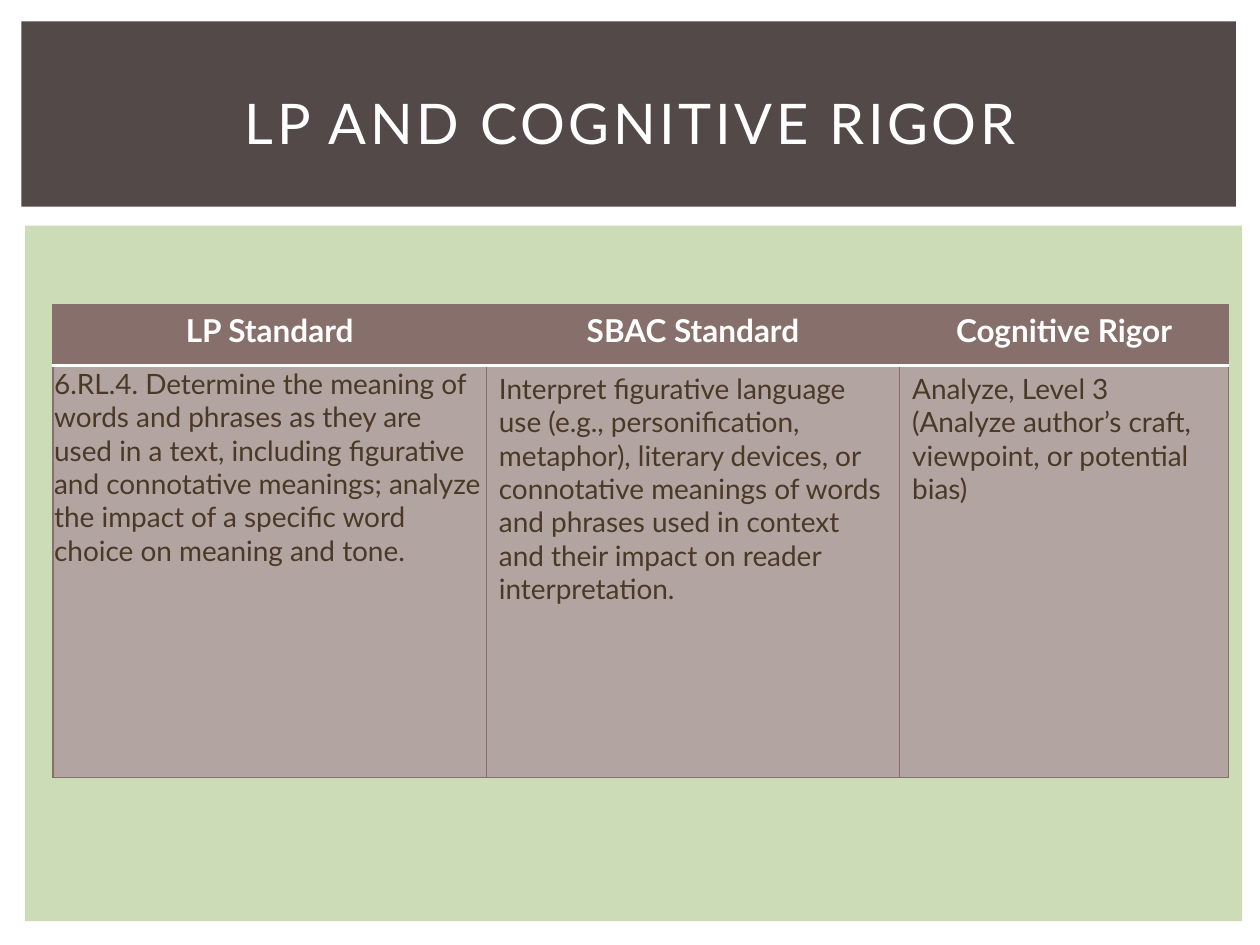
from dataclasses import dataclass

from lxml.etree import SubElement
from pptx import Presentation
from pptx.dml.color import RGBColor
from pptx.enum.shapes import MSO_SHAPE
from pptx.enum.text import MSO_ANCHOR, PP_ALIGN
from pptx.oxml.ns import qn
from pptx.util import Inches, Pt


@dataclass(frozen=True)
class Theme:
    font: str = "Lato"
    white: str = "FFFFFF"
    banner: str = "534949"
    panel: str = "CBDCB6"
    header: str = "87706B"
    body: str = "B2A5A1"
    text: str = "4A3927"
    title_size: int = 32
    header_size: int = 18
    body_size: int = 16


theme = Theme()


def add_span(para, text, size, color, bold=False):
    span = para.add_run()
    span.text = text
    span.font.name = theme.font
    span.font.size = Pt(size)
    span.font.bold = bold
    span.font.color.rgb = RGBColor.from_string(color)
    return span


def set_border(cell, side, color, width):
    """Add one cell border; call in the order L, R, T, B and before the fill."""
    line = SubElement(cell._tc.get_or_add_tcPr(), qn(f"a:ln{side}"), w=str(Pt(width)))
    fill = SubElement(line, qn("a:solidFill"))
    SubElement(fill, qn("a:srgbClr"), val=color)


deck = Presentation()
deck.slide_width, deck.slide_height = Inches(10), Inches(7.5)
page = deck.slides.add_slide(deck.slide_layouts[6])

# Background panel and title banner
for color, *bounds in (
    (theme.panel, 0.2, 1.79, 9.66, 5.52),
    (theme.banner, 0.17, 0.17, 9.64, 1.47),
):
    block = page.shapes.add_shape(MSO_SHAPE.RECTANGLE, *map(Inches, bounds))
    block.shadow.inherit = False
    block.fill.solid()
    block.fill.fore_color.rgb = RGBColor.from_string(color)
    block.line.fill.background()

# Title
box = page.shapes.add_textbox(Inches(0.42), Inches(0.39), Inches(9.17), Inches(1.15))
box.text_frame.word_wrap = True
box.text_frame.vertical_anchor = MSO_ANCHOR.MIDDLE
para = box.text_frame.paragraphs[0]
para.alignment = PP_ALIGN.CENTER
span = add_span(para, "LP AND COGNITIVE RIGOR", theme.title_size, theme.white)
span.font._element.set("spc", "200")

# Standards table: each cell is a list of runs
rows = [
    [["LP Standard"], ["SBAC Standard"], ["Cognitive Rigor"]],
    [
        [
            "6.RL.4. ",
            "Determine the meaning of words and phrases as they are used in a text, "
            "including figurative and connotative meanings; analyze the impact of a "
            "specific word choice on meaning and tone.",
        ],
        [
            "Interpret figurative language use (e.g., personification, metaphor), "
            "literary devices, or connotative meanings of words and phrases used in "
            "context and their impact on reader interpretation."
        ],
        ["Analyze, Level 3 (Analyze author’s craft, viewpoint, or potential bias)"],
    ],
]
table = page.shapes.add_table(
    2, 3, Inches(0.42), Inches(2.42), Inches(9.33), Inches(3.75)
).table
table.horz_banding = False
for column, width in zip(table.columns, (3.44, 3.28, 2.61)):
    column.width = Inches(width)
for row, height in zip(table.rows, (0.48, 3.27)):
    row.height = Inches(height)

for row_index, row in enumerate(rows):
    is_header = row_index == 0
    white_side = "B" if is_header else "T"
    for column_index, texts in enumerate(row):
        cell = table.cell(row_index, column_index)
        for side in "LRTB":
            if side == white_side:
                set_border(cell, side, theme.white, 1.5)
            else:
                set_border(cell, side, theme.header, 0.79)
        cell.fill.solid()
        cell.fill.fore_color.rgb = RGBColor.from_string(
            theme.header if is_header else theme.body
        )
        para = cell.text_frame.paragraphs[0]
        para.alignment = PP_ALIGN.CENTER if is_header else PP_ALIGN.LEFT
        for text in texts:
            if is_header:
                add_span(para, text, theme.header_size, theme.white, bold=True)
            else:
                add_span(para, text, theme.body_size, theme.text)

standard = table.cell(1, 0)
standard.margin_left = standard.margin_right = standard.margin_top = Inches(0.01)
standard.margin_bottom = 0

deck.save("out.pptx")
